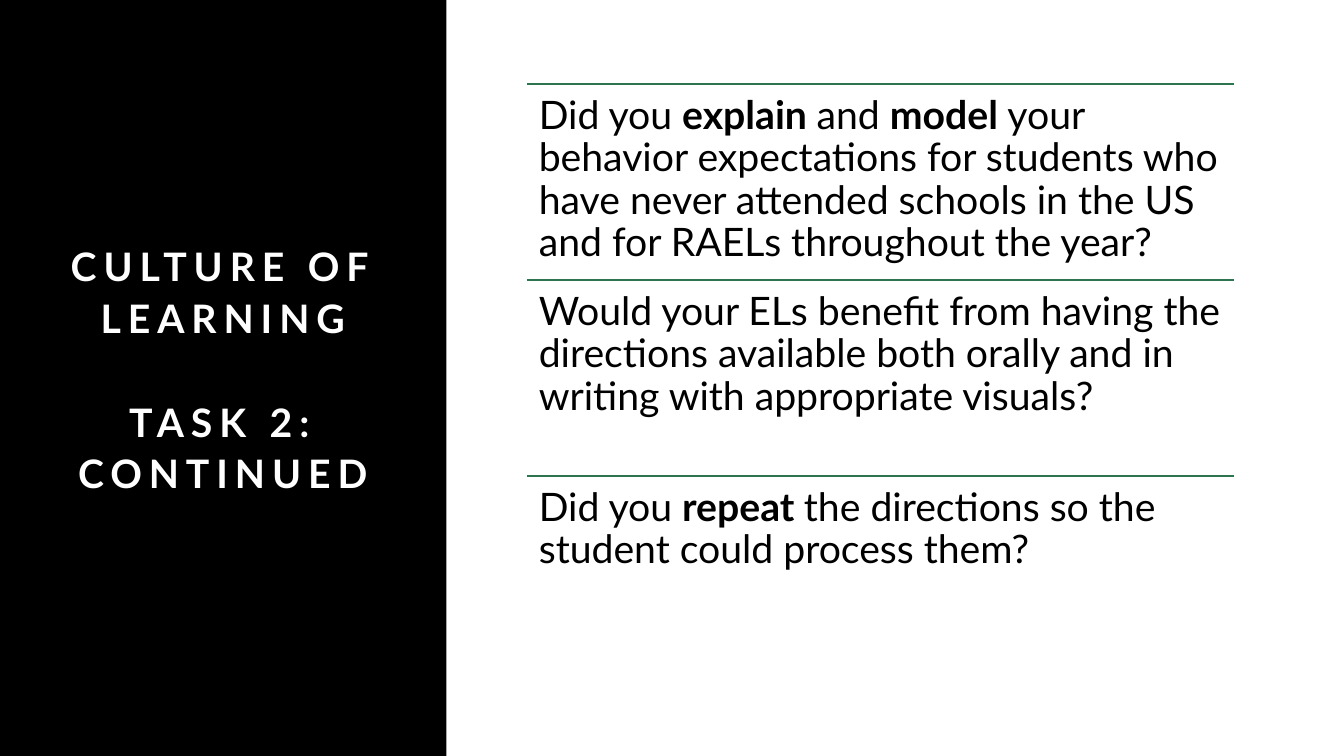
"""Build the Culture of Learning slide: a dark title panel beside three ruled questions."""
from lxml import etree
from pptx import Presentation
from pptx.dml.color import RGBColor
from pptx.enum.shapes import MSO_CONNECTOR, MSO_SHAPE
from pptx.enum.text import MSO_ANCHOR, MSO_AUTO_SIZE, PP_ALIGN
from pptx.oxml.ns import qn
from pptx.util import Cm, Pt

STRAIGHT, RECTANGLE = MSO_CONNECTOR.STRAIGHT, MSO_SHAPE.RECTANGLE
TOP, MIDDLE, NO_FIT = MSO_ANCHOR.TOP, MSO_ANCHOR.MIDDLE, MSO_AUTO_SIZE.NONE
LEFT, CENTER = PP_ALIGN.LEFT, PP_ALIGN.CENTER

HEADING = ["CULTURE OF LEARNING", "TASK 2:\vCONTINUED"]
QUESTIONS = [
    "Did you **explain **and **model **your behavior expectations for students who "
    "have never attended schools in the US and for RAELs throughout the year?",
    "Would your ELs benefit from having the directions available both orally and "
    "in writing with appropriate visuals?",
    "Did you **repeat **the directions so the student could process them?",
]
COLORS = {"panel": "000000", "heading": "FFFFFF", "question": "000000", "rule": "2E744E"}
FONT, SIZE = "Lato", 28

SLIDE_W, SLIDE_H = 33.87, 19.05
PANEL_W = 11.25
HEADING_BOX = (1.27, 1.6, 8.69, 15.32)
LIST_LEFT, LIST_TOP, LIST_W, ROW_H = 13.28, 2.11, 17.83, 4.94
INSET = 0.3


def write(frame, paragraphs, color, align=LEFT, anchor=TOP, line_spacing=0.9,
          gap=0, bold=False, tracking=0):
    """Fill a text frame; text between double asterisks turns bold."""
    frame.word_wrap = True
    frame.auto_size = NO_FIT
    frame.vertical_anchor = anchor
    for index, text in enumerate(paragraphs):
        paragraph = frame.add_paragraph() if index else frame.paragraphs[0]
        paragraph.alignment = align
        paragraph.line_spacing = line_spacing
        paragraph.space_before = Pt(gap if index else 0)
        for part, words in enumerate(text.split("**")):
            for piece, line in enumerate(words.split("\v")):
                if piece:
                    paragraph.add_line_break()
                run = paragraph.add_run()
                run.text = line
                run.font.name = FONT
                run.font.size = Pt(SIZE)
                run.font.bold = bold or part % 2 == 1
                run.font.color.rgb = RGBColor.from_string(COLORS[color])
                if tracking:
                    run.font._element.set("spc", str(tracking * 100))


def add_panel(slide):
    """Place the dark panel behind everything else."""
    panel = slide.shapes.add_shape(RECTANGLE, 0, 0, Cm(PANEL_W), Cm(SLIDE_H))
    panel.shadow.inherit = False
    panel.fill.solid()
    panel.fill.fore_color.rgb = RGBColor.from_string(COLORS["panel"])
    panel.line.fill.background()
    slide.shapes._spTree.insert(2, panel._element)


def add_question(slide, question, top):
    """Draw a rule with its question below it."""
    rule = slide.shapes.add_connector(
        STRAIGHT, Cm(LIST_LEFT), Cm(top), Cm(LIST_LEFT + LIST_W), Cm(top))
    rule.line.color.rgb = RGBColor.from_string(COLORS["rule"])
    rule.line.width = Pt(1.5)
    etree.SubElement(rule._element.spPr, qn("a:effectLst"))

    box = slide.shapes.add_textbox(Cm(LIST_LEFT), Cm(top), Cm(LIST_W), Cm(ROW_H))
    frame = box.text_frame
    frame.margin_left = frame.margin_right = Cm(INSET)
    frame.margin_top = frame.margin_bottom = Cm(INSET)
    write(frame, [question], "question")


def main():
    """Assemble and save the slide."""
    deck = Presentation()
    deck.slide_width, deck.slide_height = Cm(SLIDE_W), Cm(SLIDE_H)
    slide = deck.slides.add_slide(deck.slide_layouts[5])
    add_panel(slide)

    heading = slide.shapes.title
    heading.left, heading.top, heading.width, heading.height = map(Cm, HEADING_BOX)
    write(heading.text_frame, HEADING, "heading", align=CENTER, anchor=MIDDLE,
          line_spacing=1.1, gap=37, bold=True, tracking=5)

    for row, question in enumerate(QUESTIONS):
        add_question(slide, question, LIST_TOP + row * ROW_H)
    deck.save("out.pptx")


if __name__ == "__main__":
    main()
